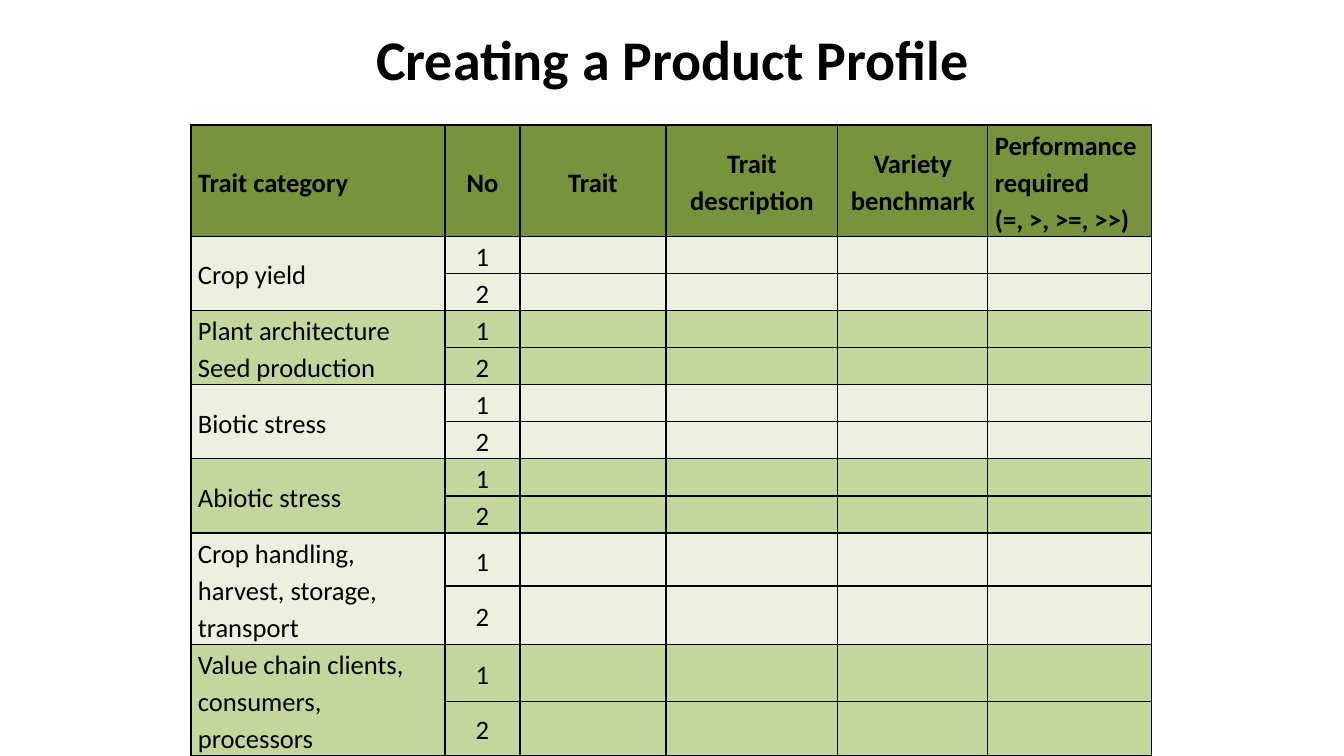
from lxml import etree
from pptx import Presentation
from pptx.dml.color import RGBColor
from pptx.enum.text import MSO_ANCHOR, MSO_AUTO_SIZE, PP_ALIGN
from pptx.oxml.ns import qn
from pptx.util import Emu, Pt

LEFT, CENTER = PP_ALIGN.LEFT, PP_ALIGN.CENTER
TOP, MIDDLE = MSO_ANCHOR.TOP, MSO_ANCHOR.MIDDLE
NO_AUTOFIT = MSO_AUTO_SIZE.NONE
TITLE_ONLY = 5
EMU_PER_PX = 914400 / 100.8

COLORS = {
    "text": "000000",
    "border": "000000",
    "header": "77933C",
    "pale": "EBF1DE",
    "green": "C3D69B",
}

HEADINGS = [
    ("Trait category", LEFT),
    ("No", CENTER),
    ("Trait", CENTER),
    ("Trait description", CENTER),
    ("Variety benchmark", CENTER),
    ("Performance required\v(=, >, >=, >>)", LEFT),
]
CATEGORIES = [
    ("Crop yield", TOP),
    ("Plant architecture \vSeed production", TOP),
    ("Biotic stress", TOP),
    ("Abiotic stress", TOP),
    ("Crop handling, harvest, storage, transport", MIDDLE),
    ("Value chain clients, \vconsumers, processors", MIDDLE),
]
TRAITS_PER_CATEGORY = 2
COLUMN_WIDTHS = [254, 75, 146, 172, 150, 164]
ROW_HEIGHTS = [111] + [37] * 8 + [53, 58, 57, 53]


def px(length):
    return Emu(round(length * EMU_PER_PX))


class ProfileSlide:
    def __init__(self, slide, font="Calibri"):
        self.slide = slide
        self.font = font

    def style(self, paragraph, size, bold, align):
        paragraph.alignment = align
        paragraph.font.name = self.font
        paragraph.font.size = Pt(size)
        paragraph.font.bold = bold
        paragraph.font.color.rgb = RGBColor.from_string(COLORS["text"])

    def title(self, text, left, top, width, height):
        heading = self.slide.shapes.title
        heading.left, heading.top = px(left), px(top)
        heading.width, heading.height = px(width), px(height)
        frame = heading.text_frame
        frame.text = text
        frame.auto_size = NO_AUTOFIT
        frame.vertical_anchor = MIDDLE
        self.style(frame.paragraphs[0], 40, True, CENTER)

    def table(self, left, top, widths, heights):
        frame = self.slide.shapes.add_table(
            len(heights), len(widths),
            px(left), px(top), px(sum(widths)), px(sum(heights)))
        grid = frame.table
        grid.first_row = grid.horz_banding = False
        for column, width in zip(grid.columns, widths):
            column.width = px(width)
        for row, height in zip(grid.rows, heights):
            row.height = px(height)
        return grid

    def cell(self, cell, text, fill, align=LEFT, anchor=MIDDLE, bold=False):
        cell.margin_left = cell.margin_right = px(7)
        cell.margin_top = cell.margin_bottom = 0
        cell.vertical_anchor = anchor
        paragraph = cell.text_frame.paragraphs[0]
        if text:
            paragraph.text = text
        paragraph.line_spacing = 1.15
        paragraph.space_after = Pt(10)
        self.style(paragraph, 19, bold, align)
        self.borders(cell)
        cell.fill.solid()
        cell.fill.fore_color.rgb = RGBColor.from_string(COLORS[fill])

    def borders(self, cell):
        properties = cell._tc.get_or_add_tcPr()
        for side in ("a:lnL", "a:lnR", "a:lnT", "a:lnB"):
            line = etree.SubElement(properties, qn(side), w=str(Pt(1)))
            paint = etree.SubElement(line, qn("a:solidFill"))
            etree.SubElement(paint, qn("a:srgbClr"), val=COLORS["border"])


def main():
    deck = Presentation()
    deck.slide_width, deck.slide_height = px(1344), px(756)
    page = ProfileSlide(deck.slides.add_slide(deck.slide_layouts[TITLE_ONLY]))

    page.title("Creating a Product Profile", 219, 17, 907, 82)
    profile = page.table(191, 125, COLUMN_WIDTHS, ROW_HEIGHTS)

    for column, (heading, align) in enumerate(HEADINGS):
        page.cell(profile.cell(0, column), heading, "header", align, bold=True)

    for index, (category, number_anchor) in enumerate(CATEGORIES):
        fill = ("pale", "green")[index % 2]
        first = 1 + index * TRAITS_PER_CATEGORY
        last = first + TRAITS_PER_CATEGORY - 1
        for number, row in enumerate(range(first, last + 1), start=1):
            label = category if row == first else ""
            page.cell(profile.cell(row, 0), label, fill)
            page.cell(profile.cell(row, 1), str(number), fill, CENTER, number_anchor)
            for column in range(2, len(HEADINGS)):
                page.cell(profile.cell(row, column), "", fill)
        profile.cell(first, 0).merge(profile.cell(last, 0))

    deck.save("out.pptx")


if __name__ == "__main__":
    main()
